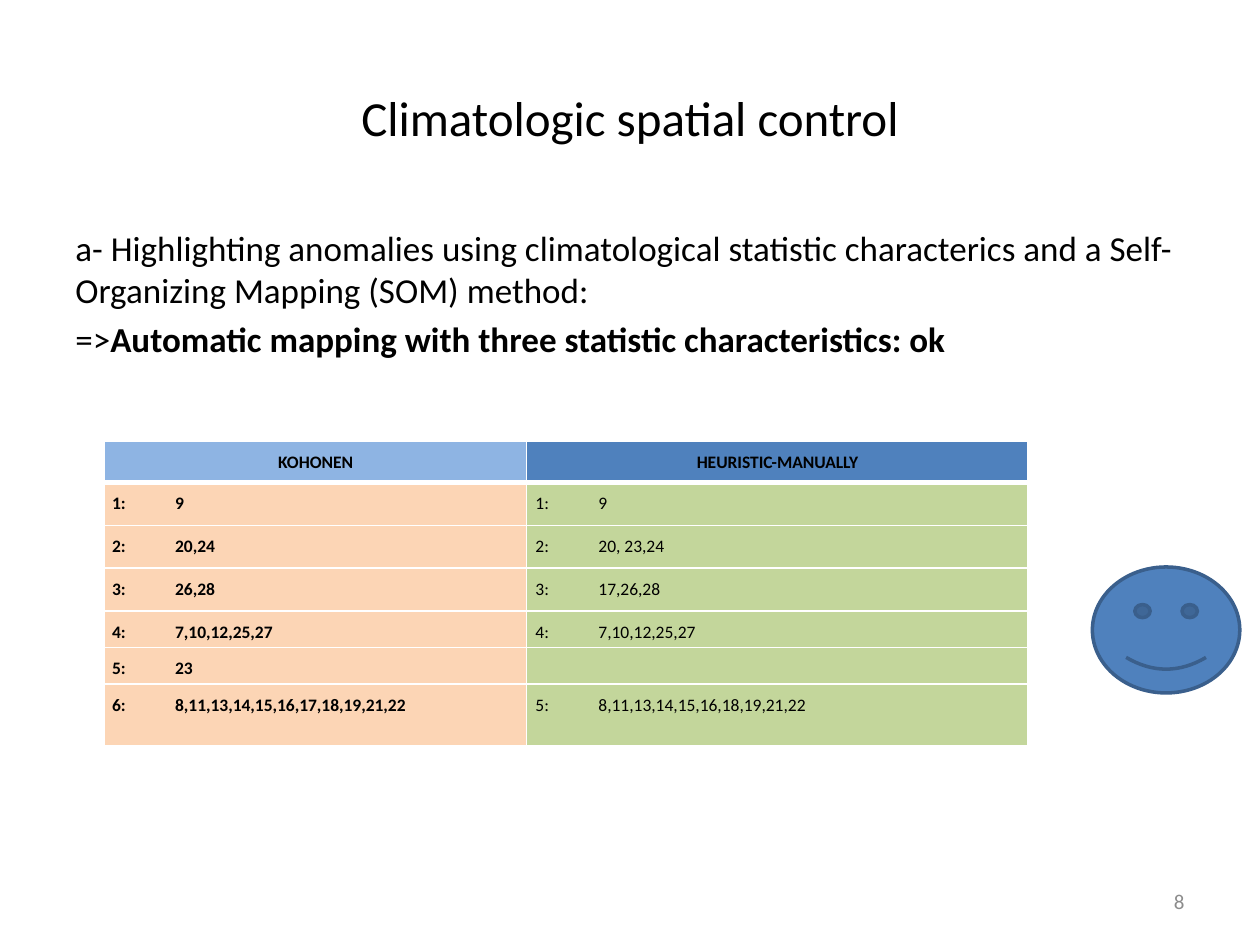
from typing import NamedTuple

from lxml.etree import SubElement
from pptx import Presentation
from pptx.dml.color import RGBColor
from pptx.enum.shapes import MSO_SHAPE as Shape
from pptx.enum.text import MSO_ANCHOR as Anchor, PP_ALIGN as Align
from pptx.oxml.ns import qn
from pptx.util import Inches, Pt

FONT = "Calibri"
BLACK, WHITE, GREY = "000000", "FFFFFF", "8C8C8C"
BLUE, DARK_BLUE, LIGHT_BLUE = "4F81BD", "3A5F8C", "8EB4E3"
ORANGE, GREEN = "FCD5B5", "C3D69B"


class Column(NamedTuple):
    heading: str
    width: float
    inset: float
    head_fill: str
    body_fill: str
    bold: bool
    groups: list[str]


COLUMNS = [
    Column("KOHONEN", 3.35, 0.06, LIGHT_BLUE, ORANGE, True,
           ["9", "20,24", "26,28", "7,10,12,25,27", "23",
            "8,11,13,14,15,16,17,18,19,21,22"]),
    Column("HEURISTIC-MANUALLY", 3.98, 0.07, BLUE, GREEN, False,
           ["9", "20, 23,24", "17,26,28", "7,10,12,25,27", "",
            "8,11,13,14,15,16,18,19,21,22"]),
]
ROW_HEIGHTS = [0.33, 0.34, 0.34, 0.34, 0.29, 0.29, 0.49]


def rgb(value: str) -> RGBColor:
    return RGBColor.from_string(value)


def style(para, size: float, color: str = BLACK, bold: bool = False) -> None:
    for span in para.runs:
        span.font.name = FONT
        span.font.size = Pt(size)
        span.font.bold = bold
        span.font.color.rgb = rgb(color)


def add_box(page, left: float, top: float, width: float, height: float):
    box = page.shapes.add_textbox(Inches(left), Inches(top), Inches(width), Inches(height))
    box.text_frame.word_wrap = True
    return box


def set_borders(cell, bottom: float) -> None:
    """Draw white cell edges; the fill has to be set afterwards."""
    props = cell._tc.get_or_add_tcPr()
    for edge, width in (("L", 1), ("R", 1), ("T", 1), ("B", bottom)):
        line = SubElement(props, qn(f"a:ln{edge}"), w=str(Pt(width)))
        SubElement(SubElement(line, qn("a:solidFill")), qn("a:srgbClr"), val=WHITE)


def fill_cell(cell, text: str, fill: str, inset: float, bold: bool, heading: bool) -> None:
    cell.margin_left = cell.margin_right = Inches(inset)
    cell.margin_top = cell.margin_bottom = 0
    set_borders(cell, bottom=3 if heading else 1)
    cell.fill.solid()
    cell.fill.fore_color.rgb = rgb(fill)
    cell.text_frame.text = text
    para = cell.text_frame.paragraphs[0]
    para.line_spacing = 1.5
    para.alignment = Align.CENTER if heading else Align.LEFT
    style(para, 10, bold=bold)
    if not text:  # keeps the empty row at its height
        SubElement(para._p, qn("a:endParaRPr"), sz="1000")


def add_groups_table(page) -> None:
    table = page.shapes.add_table(
        len(ROW_HEIGHTS), len(COLUMNS), Inches(0.83), Inches(3.5),
        Inches(sum(column.width for column in COLUMNS)), Inches(sum(ROW_HEIGHTS))).table
    for row, height in zip(table.rows, ROW_HEIGHTS):
        row.height = Inches(height)
    for index, column in enumerate(COLUMNS):
        table.columns[index].width = Inches(column.width)
        fill_cell(table.cell(0, index), column.heading, column.head_fill, 0.06, True, True)
        number = 0
        for row_index, group in enumerate(column.groups, start=1):
            number += bool(group)  # empty groups are not numbered
            text = f"{number}:\t{group}" if group else ""
            fill_cell(table.cell(row_index, index), text, column.body_fill,
                      column.inset, column.bold, False)


def main() -> None:
    deck = Presentation()
    deck.slide_width, deck.slide_height = Inches(10), Inches(7.5)
    page = deck.slides.add_slide(deck.slide_layouts[5])

    # Title
    title = page.shapes.title
    title.left, title.top = Inches(0.5), Inches(0.3)
    title.width, title.height = Inches(9), Inches(1.25)
    title.text_frame.text = "Climatologic spatial control"
    title.text_frame.vertical_anchor = Anchor.MIDDLE
    title.text_frame.paragraphs[0].alignment = Align.CENTER
    style(title.text_frame.paragraphs[0], 28)

    # Method and result
    body = add_box(page, 0.5, 1.75, 9, 4.95).text_frame
    body.text = ("a- Highlighting anomalies using climatological statistic characterics "
                 "and a Self-Organizing Mapping (SOM) method:\n=>")
    result = body.paragraphs[1].add_run()
    result.text = "Automatic mapping with three statistic characteristics: ok"
    for para in body.paragraphs:
        para.space_before = Pt(4)
        style(para, 20)
    result.font.bold = True

    # Page number
    number = add_box(page, 7.17, 6.95, 2.33, 0.4).text_frame
    number.text = "8"
    number.vertical_anchor = Anchor.MIDDLE
    number.paragraphs[0].alignment = Align.RIGHT
    style(number.paragraphs[0], 12, GREY)

    # Comparison of groups
    add_groups_table(page)

    # Smiley
    smiley = page.shapes.add_shape(
        Shape.SMILEY_FACE, Inches(8.67), Inches(4.5), Inches(1.17), Inches(1))
    smiley.shadow.inherit = False
    smiley.fill.solid()
    smiley.fill.fore_color.rgb = rgb(BLUE)
    smiley.line.color.rgb = rgb(DARK_BLUE)
    smiley.line.width = Pt(2)

    deck.save("out.pptx")


if __name__ == "__main__":
    main()
